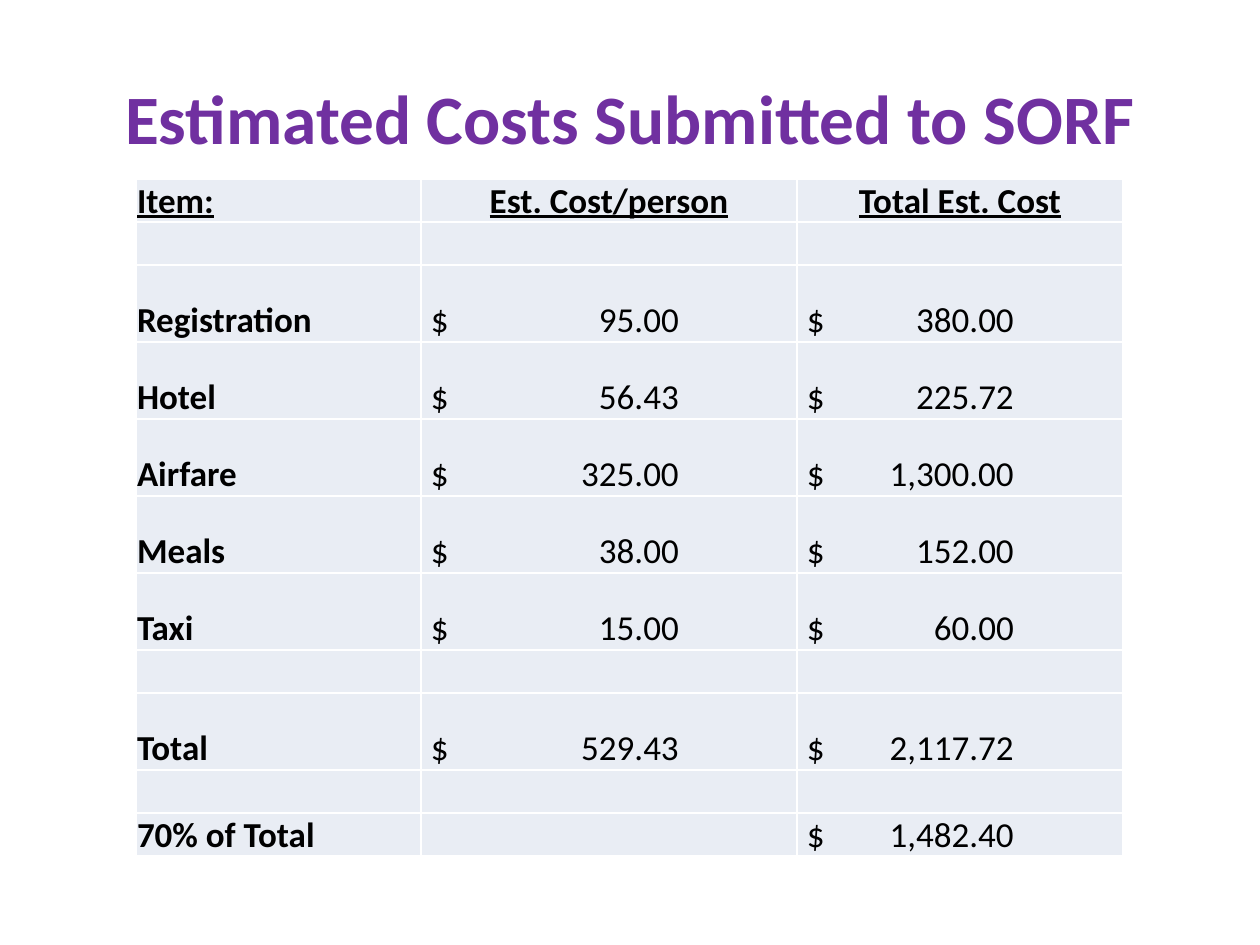
from lxml.etree import SubElement
from pptx import Presentation
from pptx.dml.color import RGBColor
from pptx.enum.text import MSO_ANCHOR as Anchor, PP_ALIGN as Align
from pptx.oxml.ns import qn
from pptx.util import Emu, Pt

PURPLE = RGBColor(0x70, 0x30, 0xA0)
BLACK = RGBColor(0, 0, 0)
PALE = RGBColor(0xE9, 0xED, 0xF4)
WHITE = RGBColor(0xFF, 0xFF, 0xFF)
FONT = "Calibri"


def px(length):
    return Emu(round(length * 914400 / 126))


def style(font, size, color, bold):
    font.name = FONT
    font.size = Pt(size)
    font.color.rgb = color
    font.bold = bold


presentation = Presentation()
presentation.slide_width = px(1260)
presentation.slide_height = px(945)
slide = presentation.slides.add_slide(presentation.slide_layouts[6])

title = slide.shapes.add_textbox(px(63), px(38), px(1134), px(157))
title_frame = title.text_frame
title_frame.word_wrap = True
title_frame.vertical_anchor = Anchor.MIDDLE
title_frame.text = "Estimated Costs Submitted to SORF"
title_paragraph = title_frame.paragraphs[0]
title_paragraph.alignment = Align.CENTER
style(title_paragraph.runs[0].font, 39.6, PURPLE, True)

BLANK = ("", "", "")
costs = [
    ("Item:", "Est. Cost/person", "Total Est. Cost"),
    BLANK,
    ("Registration", "95.00", "380.00"),
    ("Hotel", "56.43", "225.72"),
    ("Airfare", "325.00", "1,300.00"),
    ("Meals", "38.00", "152.00"),
    ("Taxi", "15.00", "60.00"),
    BLANK,
    ("Total", "529.43", "2,117.72"),
    BLANK,
    ("70% of Total", "", "1,482.40"),
]
column_widths = [285, 376, 326]
amount_tabs = [0, 248, 207]
SHORT, TALL = 43, 77
short_rows = {0, 1, 7, 9, 10}
row_heights = [SHORT if row in short_rows else TALL for row in range(len(costs))]

table = slide.shapes.add_table(
    len(costs), len(column_widths), px(136), px(179),
    px(sum(column_widths)), px(sum(row_heights))).table
table.first_row = False
table.horz_banding = False
for column, width in zip(table.columns, column_widths):
    column.width = px(width)

for row_index, (values, height) in enumerate(zip(costs, row_heights)):
    table.rows[row_index].height = px(height)
    for column_index, value in enumerate(values):
        cell = table.cell(row_index, column_index)
        is_header = row_index == 0
        is_amount = bool(value) and not is_header and column_index > 0
        cell.vertical_anchor = Anchor.BOTTOM
        cell.margin_left = px(10 if is_amount else 1)
        cell.margin_right = cell.margin_top = px(1)
        cell.margin_bottom = 0

        properties = cell._tc.get_or_add_tcPr()
        for side in ("lnL", "lnR", "lnT", "lnB"):
            border = SubElement(properties, qn(f"a:{side}"), w=str(Pt(1)))
            border_fill = SubElement(border, qn("a:solidFill"))
            SubElement(border_fill, qn("a:srgbClr"), val=str(WHITE))
        cell.fill.solid()
        cell.fill.fore_color.rgb = PALE

        cell.text_frame.text = f"$\t{value}" if is_amount else value
        paragraph = cell.text_frame.paragraphs[0]
        paragraph.alignment = Align.CENTER if is_header and column_index else Align.LEFT
        if is_amount:
            tabs = SubElement(paragraph._p.get_or_add_pPr(), qn("a:tabLst"))
            SubElement(tabs, qn("a:tab"), pos=str(px(amount_tabs[column_index])), algn="r")
        if not value:
            paragraph.font.size = Pt(20)
        for run in paragraph.runs:
            style(run.font, 20, BLACK, not is_amount)
            run.font.underline = is_header

presentation.save("out.pptx")
